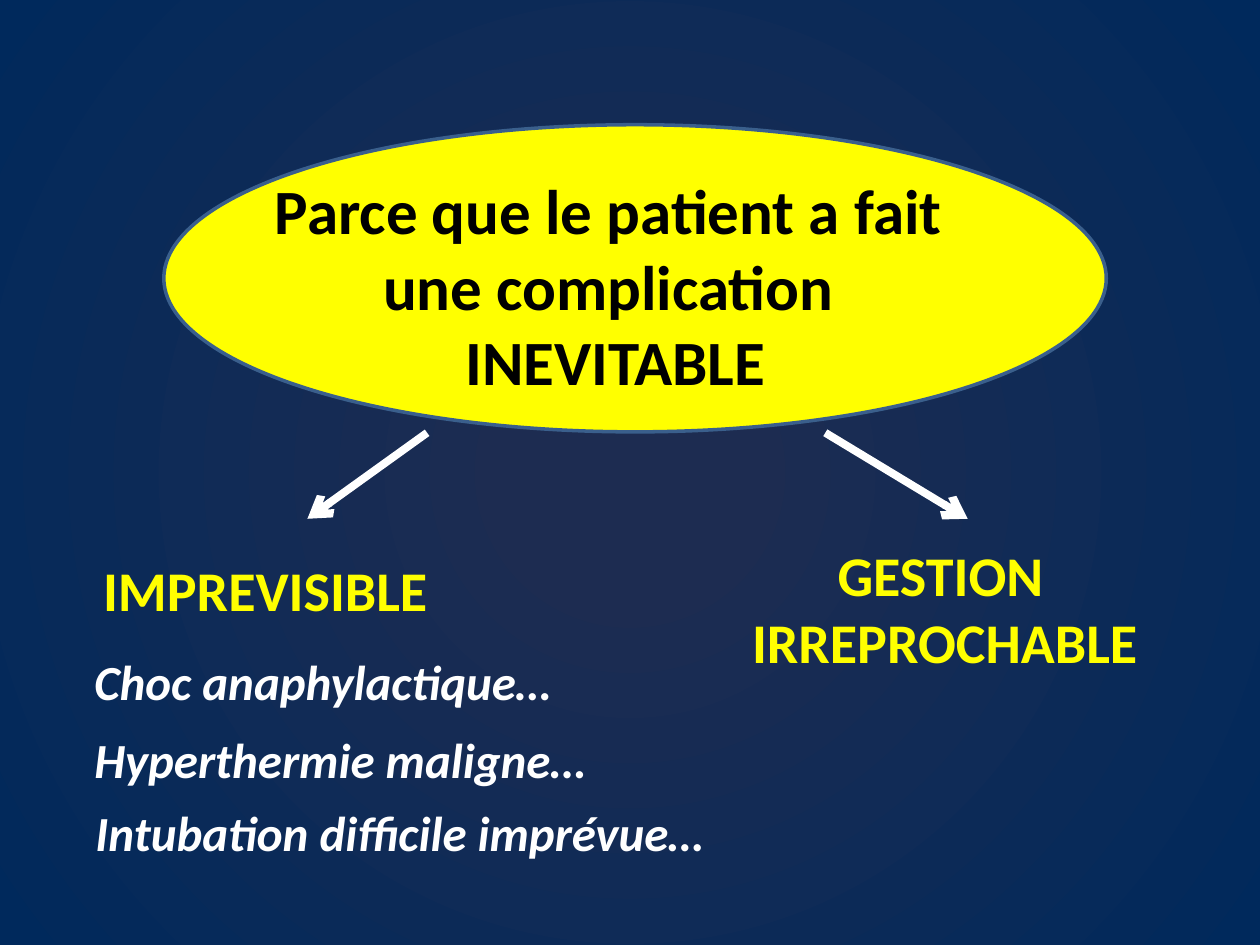
from lxml import etree
from pptx import Presentation
from pptx import util as u
from pptx.dml.color import RGBColor as rgb
from pptx.enum import shapes, text
from pptx.oxml import ns

hue = rgb.from_string
deck = Presentation()
deck.slide_width, deck.slide_height = u.Inches(10), u.Inches(7.5)
col, row = deck.slide_width / 100, deck.slide_height / 100
slide = deck.slides.add_slide(deck.slide_layouts[6])


def grid(*spots):
    return [round(spot * (row if i % 2 else col)) for i, spot in enumerate(spots)]


def write(spot, lines, size, tint, mid=(), slant=False, wrap=True):
    frame = slide.shapes.add_textbox(*grid(*spot)).text_frame
    frame.word_wrap = wrap
    frame.auto_size = text.MSO_AUTO_SIZE.SHAPE_TO_FIT_TEXT
    frame.text = "\n".join(lines)
    for i, para in enumerate(frame.paragraphs):
        para.alignment = text.PP_ALIGN.CENTER if i in mid else text.PP_ALIGN.LEFT
        for run in para.runs:
            font = run.font
            font.name, font.size, font.bold = "Calibri", u.Pt(size), True
            font.italic = slant
            font.color.rgb = hue(tint)


fill = slide.background.fill
fill.gradient()
for stop, (place, tint) in zip(fill.gradient_stops, [(0.14, "1D2C51"), (1, "00295C")]):
    stop.position = place
    stop.color.rgb = hue(tint)
grad = slide.element.find(".//" + ns.qn("a:gradFill"))
grad.remove(grad.find(ns.qn("a:lin")))
glow = etree.SubElement(grad, ns.qn("a:path"), path="circle")
etree.SubElement(glow, ns.qn("a:fillToRect"), l="50000", t="50000", r="50000", b="50000")

oval = slide.shapes.add_shape(shapes.MSO_SHAPE.OVAL, *grid(13, 13.2, 74.8, 32.5))
oval.shadow.inherit = False
oval.fill.solid()
oval.fill.fore_color.rgb = hue("FFFF00")
oval.line.color.rgb = hue("3A5F8C")
oval.line.width = u.Pt(2)

cause = ["Parce que le patient a fait ", "une complication ", "INEVITABLE"]
write((19.3, 17.5, 59.1, 25.6), cause, 36, "000000", mid=(0, 1, 2))
write((7.2, 58.1, 28, 8.5), ["IMPREVISIBLE"], 32, "FFFF00", wrap=False)
write((58.7, 56.5, 32.9, 15.7), ["GESTION ", "IRREPROCHABLE"], 32, "FFFF00", mid=(0,), wrap=False)

cases = [
    (6.5, 68.3, 45.8, "Choc anaphylactique…"),
    (6.5, 76.5, 49, "Hyperthermie maligne…"),
    (6.6, 84.3, 61.3, "Intubation difficile imprévue…"),
]
for left, top, wide, name in cases:
    write((left, top, wide, 7.6), [name], 28, "FFFFFF", slant=True)

for ends in [(33.9, 45.8, 24.4, 54.9), (65.5, 45.8, 76.8, 54.9)]:
    link = slide.shapes.add_connector(shapes.MSO_CONNECTOR.STRAIGHT, *grid(*ends))
    link.line.color.rgb = hue("FFFFFF")
    link.line.width = u.Pt(4.5)
    etree.SubElement(link.line._get_or_add_ln(), ns.qn("a:tailEnd"), type="arrow")
    etree.SubElement(link.element.spPr, ns.qn("a:effectLst"))

deck.save("out.pptx")
